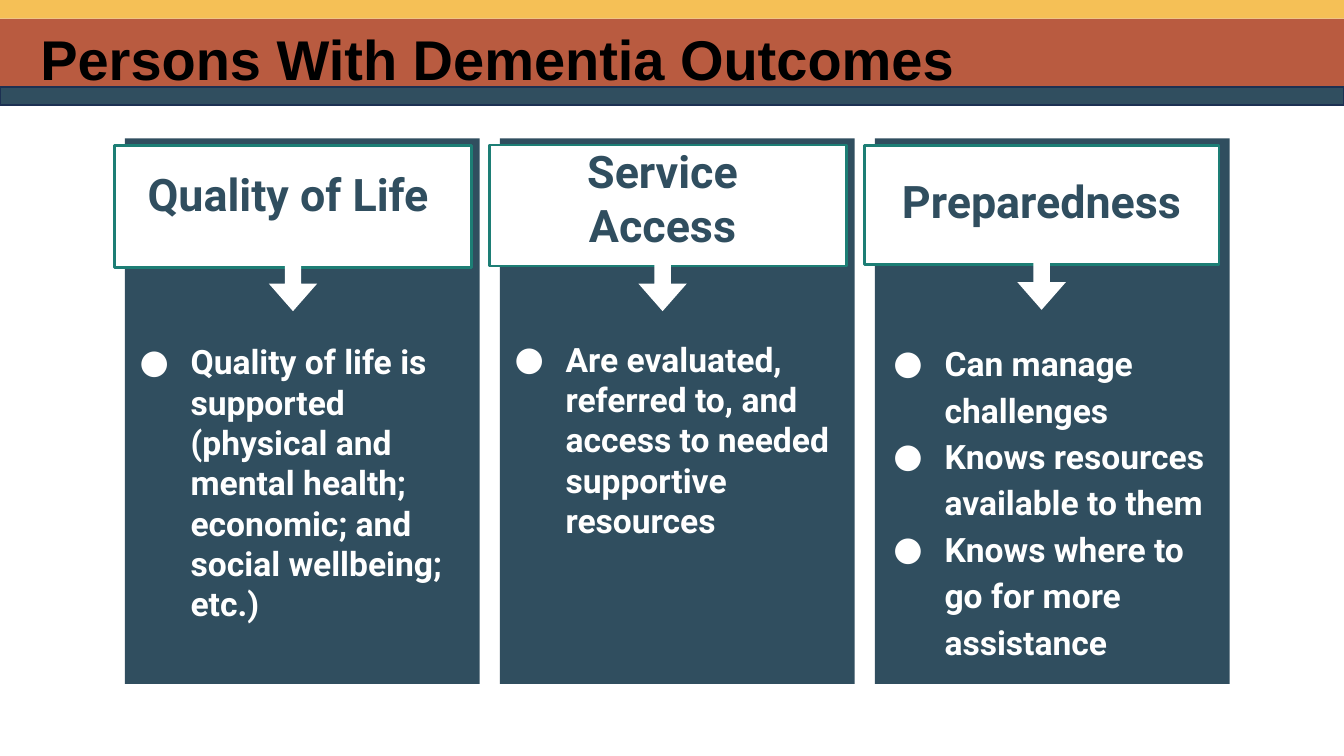
from lxml import etree
from pptx import Presentation
from pptx import util as u
from pptx.dml.color import RGBColor
from pptx.enum import shapes, text
from pptx.oxml import ns

WIDTH = 10
HEIGHT = WIDTH * 9 / 16
NAVY, WHITE, TEAL = "304E5F", "FFFFFF", "1D7E75"
PANEL_LEFT, PANEL_TOP, PANEL_WIDTH, PANEL_HEIGHT = 0.93, 1.03, 2.64, 4.06
PANEL_PITCH = 2.79
ARROW_WIDTH, ARROW_HEIGHT = 0.39, 0.36

# Offsets and sizes are in inches, measured from the panel's top left corner.
OUTCOMES = [
    dict(heading="Quality of Life", card=(2.66, 0.91), align="LEFT",
         heading_box=(0.07, 0.11, 2.36, 0.85), arrow_top=0.91,
         body_box=(-0.11, 1.41, 2.64, 0.61), spacing=None,
         points=["Quality of life is supported (physical and mental health; "
                 "economic; and social wellbeing; etc.)"]),
    dict(heading="Service Access", card=(2.66, 0.9), align="CENTER",
         heading_box=(0.03, -0.06, 2.36, 0.76), arrow_top=0.91,
         body_box=(-0.11, 1.39, 2.72, 2.14), spacing=None,
         points=["Are evaluated, referred to, and access to needed "
                 "supportive resources"]),
    dict(heading="Preparedness", card=(2.64, 0.89), align="CENTER",
         heading_box=(0.06, 0.16, 2.36, 0.67), arrow_top=0.9,
         body_box=(-0.08, 1.38, 2.64, 1.08), spacing=1.15,
         points=["Can manage challenges", "Knows resources available to them",
                 "Knows where to go for more assistance"]),
]


def color(value):
    return RGBColor.from_string(value)


def inches(box):
    return [u.Inches(length) for length in box]


def add_block(parent, kind, box, fill, line=None, line_width=1):
    block = parent.add_shape(kind, *inches(box))
    block.shadow.inherit = False
    block.fill.solid()
    block.fill.fore_color.rgb = color(fill)
    if line:
        block.line.color.rgb = color(line)
        block.line.width = u.Pt(line_width)
    else:
        block.line.fill.background()
    return block


def add_bullet(paragraph, fill, font):
    props = paragraph._p.get_or_add_pPr()
    props.set("marL", str(u.Inches(0.5)))
    props.set("indent", str(u.Inches(-0.38)))
    tint = etree.SubElement(props, ns.qn("a:buClr"))
    etree.SubElement(tint, ns.qn("a:srgbClr"), val=fill)
    etree.SubElement(props, ns.qn("a:buFont"), typeface=font)
    etree.SubElement(props, ns.qn("a:buChar"), char="●")


def write(frame, lines, size, fill, font="Roboto", align="LEFT",
          insets=(0.1, 0.1), spacing=None, bullets=False):
    """Fill a text frame with one bold paragraph per line."""
    frame.word_wrap = True
    frame.vertical_anchor = text.MSO_ANCHOR.TOP
    frame.margin_left = frame.margin_right = u.Inches(insets[0])
    frame.margin_top = frame.margin_bottom = u.Inches(insets[1])
    for index, line in enumerate(lines):
        paragraph = frame.add_paragraph() if index else frame.paragraphs[0]
        paragraph.alignment = getattr(text.PP_ALIGN, align)
        if spacing:
            paragraph.line_spacing = spacing
        if bullets:
            add_bullet(paragraph, fill, font)
        run = paragraph.add_run()
        run.text = line
        run.font.size = u.Pt(size)
        run.font.name = font
        run.font.bold = True
        run.font.color.rgb = color(fill)


def add_header(slide):
    rect = shapes.MSO_SHAPE.RECTANGLE
    for top, height, fill, line in [(0, 0.14, "F5C056", None),
                                    (0.14, 0.51, "B95B40", None),
                                    (0.65, 0.13, NAVY, "1C3052")]:
        add_block(slide.shapes, rect, (0, top, WIDTH, height), fill, line)
    title = slide.shapes.title
    title.left, title.top, title.width, title.height = inches((0.23, 0.14, 8.4, 0.58))
    write(title.text_frame, ["Persons With Dementia Outcomes"], 30, "000000",
          font="Arial", insets=(0.07, 0.04))
    title.text_frame.auto_size = text.MSO_AUTO_SIZE.SHAPE_TO_FIT_TEXT
    title.element.getparent().append(title.element)  # in front of the bands


def add_outcome(slide, panel, outcome):
    left, top, width, height = panel
    parts = slide.shapes.add_group_shape().shapes

    def place(box):
        return left + box[0], top + box[1], box[2], box[3]

    rect = shapes.MSO_SHAPE.RECTANGLE
    add_block(parts, rect, panel, NAVY)
    add_block(parts, rect, place((-0.08, 0.05, *outcome["card"])), WHITE, TEAL, 1.5)
    body = parts.add_textbox(*inches(place(outcome["body_box"])))
    write(body.text_frame, outcome["points"], 18, WHITE,
          spacing=outcome["spacing"], bullets=True)
    heading_box = outcome["heading_box"]
    heading = parts.add_textbox(*inches(place(heading_box)))
    write(heading.text_frame, [outcome["heading"]], 24, NAVY, align=outcome["align"])

    arrow_left = heading_box[0] + (heading_box[2] - ARROW_WIDTH) / 2
    arrow = add_block(parts, shapes.MSO_SHAPE.RIGHT_ARROW,
                      place((arrow_left, outcome["arrow_top"], ARROW_WIDTH, ARROW_HEIGHT)),
                      WHITE)
    arrow.rotation = 90
    arrow.adjustments[0], arrow.adjustments[1] = 0.34, 0.57


def main():
    deck = Presentation()
    deck.slide_width, deck.slide_height = inches((WIDTH, HEIGHT))
    slide = deck.slides.add_slide(deck.slide_layouts[5])
    add_header(slide)
    for column, outcome in enumerate(OUTCOMES):
        left = PANEL_LEFT + column * PANEL_PITCH
        add_outcome(slide, (left, PANEL_TOP, PANEL_WIDTH, PANEL_HEIGHT), outcome)
    deck.save("out.pptx")


if __name__ == "__main__":
    main()
